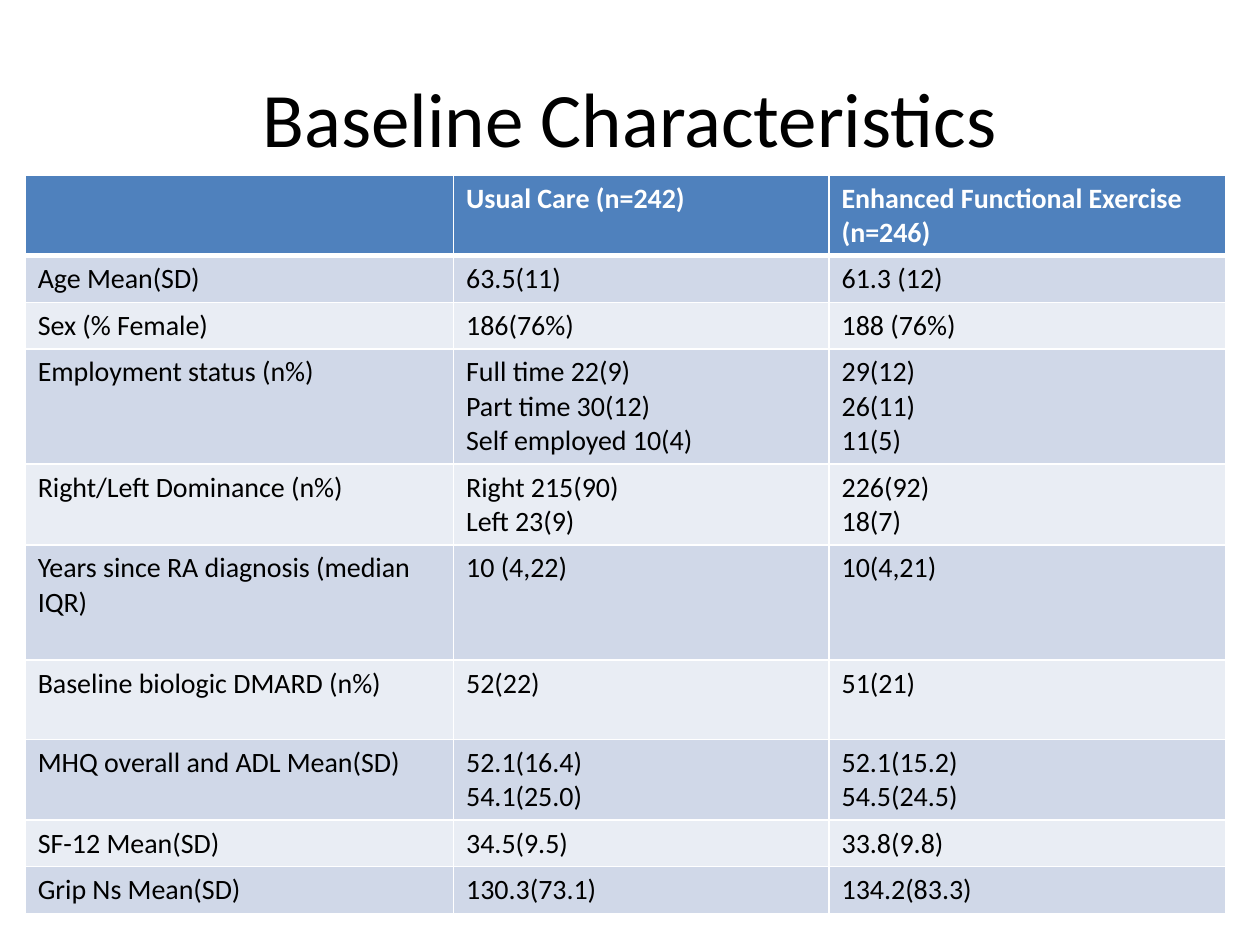
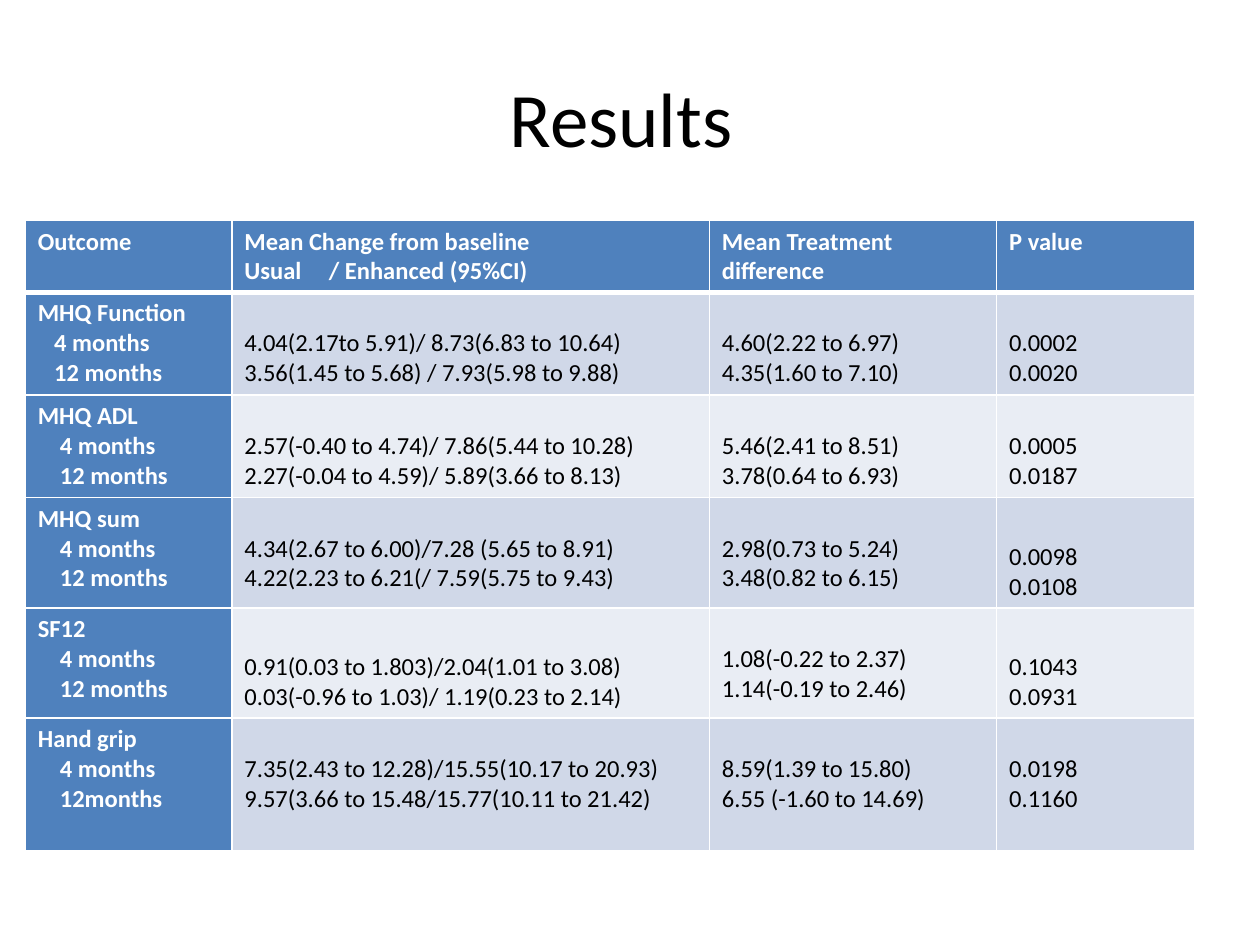
from lxml import etree
from pptx import Presentation
from pptx import util as u
from pptx.dml.color import RGBColor
from pptx.enum import text
from pptx.oxml import ns

BLACK = RGBColor(0x00, 0x00, 0x00)
WHITE = RGBColor(0xFF, 0xFF, 0xFF)
BLUE = RGBColor(0x4F, 0x81, 0xBD)
BANDS = RGBColor(0xD0, 0xD8, 0xE8), RGBColor(0xE9, 0xED, 0xF4)

GRID_COLUMNS, GRID_ROWS = 100, 75
LEFT_EDGE = 2
LINE_HEIGHT = 1.22
FONT = "Calibri"

BASELINE_ROWS = [
    ("", "Usual Care (n=242)", "Enhanced Functional Exercise (n=246)"),
    ("Age Mean(SD)", "63.5(11)", "61.3 (12)"),
    ("Sex (% Female)", "186(76%)", "188 (76%)"),
    ("Employment status (n%)",
     "Full time 22(9)\nPart time 30(12)\nSelf employed 10(4)",
     "29(12)\n26(11)\n11(5)"),
    ("Right/Left Dominance (n%)", "Right 215(90)\nLeft 23(9)", "226(92)\n18(7)"),
    ("Years since RA diagnosis (median IQR)", "10 (4,22)", "10(4,21)"),
    ("Baseline biologic DMARD (n%)", "52(22)", "51(21)"),
    ("MHQ overall and ADL Mean(SD)", "52.1(16.4)\n54.1(25.0)", "52.1(15.2)\n54.5(24.5)"),
    ("SF-12 Mean(SD)", "34.5(9.5)", "33.8(9.8)"),
    ("Grip Ns Mean(SD)", "130.3(73.1)", "134.2(83.3)"),
]

RESULT_ROWS = [
    ("Outcome", "Mean Change from baseline\nUsual\t/ Enhanced (95%CI)",
     "Mean Treatment difference", "P value"),
    ("MHQ Function\n4 months\n12 months",
     "4.04(2.17to 5.91)/ 8.73(6.83 to 10.64)\n3.56(1.45 to 5.68) / 7.93(5.98 to 9.88)",
     "4.60(2.22 to 6.97)\n4.35(1.60 to 7.10)", "0.0002\n0.0020"),
    ("MHQ ADL\n4 months\n12 months",
     "2.57(-0.40 to 4.74)/ 7.86(5.44 to 10.28)\n2.27(-0.04 to 4.59)/ 5.89(3.66 to 8.13)",
     "5.46(2.41 to 8.51)\n3.78(0.64 to 6.93)", "0.0005\n0.0187"),
    ("MHQ sum\n4 months\n12 months",
     "4.34(2.67 to 6.00)/7.28 (5.65 to 8.91)\n4.22(2.23 to 6.21(/ 7.59(5.75 to 9.43)",
     "2.98(0.73 to 5.24)\n3.48(0.82 to 6.15)", "0.0098\n0.0108"),
    ("SF12\n4 months\n12 months",
     "0.91(0.03 to 1.803)/2.04(1.01 to 3.08)\n0.03(-0.96 to 1.03)/ 1.19(0.23 to 2.14)",
     "1.08(-0.22 to 2.37)\n1.14(-0.19 to 2.46)", "0.1043\n0.0931"),
    ("Hand grip\n4 months\n12months",
     "7.35(2.43 to 12.28)/15.55(10.17 to 20.93)\n9.57(3.66 to 15.48/15.77(10.11 to 21.42)",
     "8.59(1.39 to 15.80)\n6.55 (-1.60 to 14.69)", "0.0198\n0.1160"),
]
DEEPER_OFFSETS = {(3, 3), (4, 1), (4, 3)}


class Deck:
    def __init__(self):
        self.presentation = Presentation()
        self.presentation.slide_width = u.Inches(10)
        self.presentation.slide_height = u.Inches(7.5)
        self.slide = None

    def across(self, columns):
        return int(self.presentation.slide_width * columns / GRID_COLUMNS)

    def down(self, rows):
        return int(self.presentation.slide_height * rows / GRID_ROWS)

    def apply(self, target, values):
        for attribute, value in values.items():
            setattr(target, attribute, value)

    def style_text(self, paragraph, size, color, bold=False):
        self.apply(paragraph.font, {"name": FONT, "size": u.Pt(size), "bold": bold})
        paragraph.font.color.rgb = color

    def new_slide(self, heading):
        self.slide = self.presentation.slides.add_slide(self.presentation.slide_layouts[6])
        frame = self.slide.shapes.add_textbox(
            self.across(5), self.down(3), self.across(90), self.down(12.5)).text_frame
        self.apply(frame, {"word_wrap": True, "vertical_anchor": text.MSO_ANCHOR.MIDDLE,
                           "text": heading})
        frame.paragraphs[0].alignment = text.PP_ALIGN.CENTER
        self.style_text(frame.paragraphs[0], 44, BLACK)

    def borders(self, cell, row):
        properties = cell._tc.get_or_add_tcPr()
        widths = {"L": 1, "R": 1, "T": 3 if row == 1 else 1, "B": 3 if row == 0 else 1}
        for side, width in widths.items():
            line = etree.SubElement(properties, ns.qn("a:ln" + side), w=str(u.Pt(width)))
            fill = etree.SubElement(line, ns.qn("a:solidFill"))
            etree.SubElement(fill, ns.qn("a:srgbClr"), val=str(WHITE))

    def indent(self, paragraph, columns):
        paragraph._p.get_or_add_pPr().set("marL", str(self.across(columns)))

    def tab_stop(self, paragraph, columns):
        stops = etree.SubElement(paragraph._p.get_or_add_pPr(), ns.qn("a:tabLst"))
        etree.SubElement(stops, ns.qn("a:tab"), pos=str(self.across(columns)), algn="l")

    def cell(self, cell, content, row, size, emphasized, offset):
        self.borders(cell, row)
        cell.fill.solid()
        cell.fill.fore_color.rgb = BLUE if emphasized else BANDS[(row - 1) % 2]
        cell.margin_top = u.Inches(0.05) + u.Pt(offset * LINE_HEIGHT)
        cell.text = content
        for paragraph in cell.text_frame.paragraphs:
            if "\t" in paragraph.text:
                self.tab_stop(paragraph, 6.7)
            self.style_text(paragraph, size, WHITE if emphasized else BLACK, emphasized)

    def table(self, top, widths, heights, rows, size, outcomes=False):
        table = self.slide.shapes.add_table(
            len(rows), len(widths), self.across(LEFT_EDGE), self.down(top),
            self.across(sum(widths)), self.down(sum(heights))).table
        self.apply(table, {"first_row": False, "horz_banding": False})
        for column, width in zip(table.columns, widths):
            column.width = self.across(width)
        for table_row, height in zip(table.rows, heights):
            table_row.height = self.down(height)
        for row, contents in enumerate(rows):
            for column, content in enumerate(contents):
                emphasized = row == 0 or (outcomes and column == 0)
                offset = 0
                if outcomes and not emphasized:
                    offset = 18 if (row, column) in DEEPER_OFFSETS else size
                self.cell(table.cell(row, column), content, row, size, emphasized, offset)
        return table


def main():
    deck = Deck()

    deck.new_slide("Baseline Characteristics")
    deck.table(13.9, [34, 29.8, 31.5], [6.4, 3.7, 3.7, 9.15, 6.4, 9.15, 6.3, 6.4, 3.7, 3.7],
               BASELINE_ROWS, 16)

    deck.new_slide("Results ")
    results = deck.table(17.5, [16.4, 37.9, 22.8, 15.7], [5.7, 8.15, 8.15, 8.75, 8.75, 10.5],
                         RESULT_ROWS, 14, outcomes=True)
    for row in range(1, len(RESULT_ROWS)):
        for month in results.cell(row, 0).text_frame.paragraphs[1:]:
            deck.indent(month, 1.3 if row == 1 else 1.75)

    deck.presentation.save("out.pptx")


if __name__ == "__main__":
    main()
